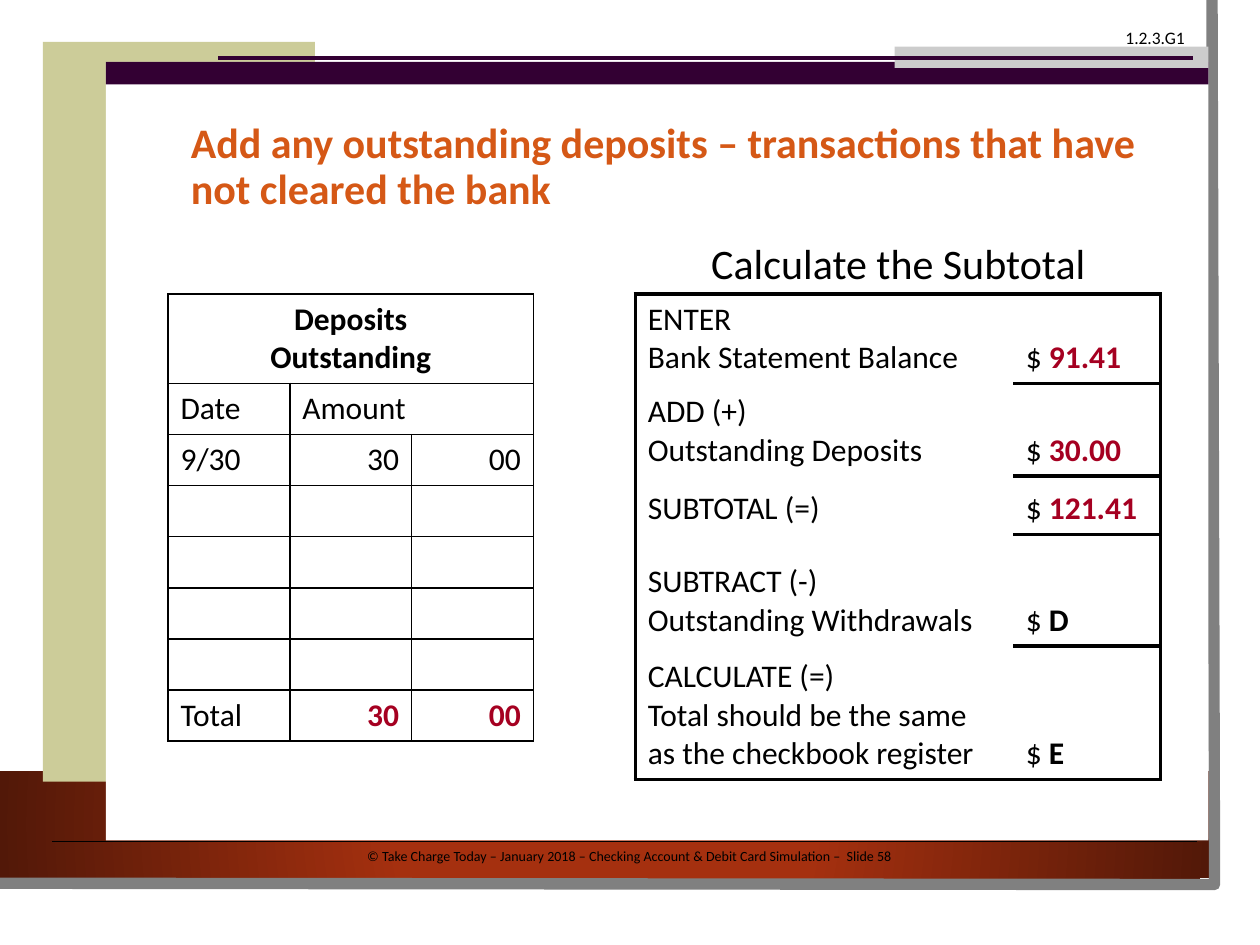
from lxml.etree import SubElement
from pptx import Presentation
from pptx.dml.color import RGBColor as Rgb
from pptx.enum.shapes import MSO_CONNECTOR as Link, MSO_SHAPE as Preset
from pptx.enum.text import MSO_ANCHOR as Anchor, PP_ALIGN as Align
from pptx.oxml import parse_xml
from pptx.oxml.ns import nsdecls, qn
from pptx.util import Inches, Pt

COLORS = {
    "ink": "000000", "paper": "FFFFFF", "edge": "808080", "khaki": "CCCC99",
    "plum": "330033", "silver": "CCCCCC", "orange": "D55816", "crimson": "A50021",
    "rust": "A5300F", "umber": "521808",
}
BODY = {"size": 18, "color": "ink"}
BOLD = {"bold": True}
ANSWER = {"bold": True, "color": "crimson"}


class SlideBuilder:
    """Draws styled elements on a grid of twelve cells to the inch."""

    def __init__(self, deck, font):
        self.slide = deck.slides.add_slide(deck.slide_layouts[6])
        self.shapes = self.slide.shapes
        self.font = font

    def cells(self, *counts):
        return [Inches(count / 12) for count in counts]

    def rgb(self, name):
        return Rgb.from_string(COLORS[name])

    def panel(self, color, *box):
        panel = self.shapes.add_shape(Preset.RECTANGLE, *self.cells(*box))
        panel.shadow.inherit = False
        panel.fill.solid()
        panel.fill.fore_color.rgb = self.rgb(color)
        panel.line.fill.background()
        return panel

    def glow(self, inner, outer, *box):
        band = self.panel(inner, *box)
        stops = "".join(
            f'<a:gs pos="{at}"><a:srgbClr val="{COLORS[name]}"/></a:gs>'
            for at, name in ((34000, inner), (100000, outer)))
        gradient = parse_xml(
            f'<a:gradFill {nsdecls("a")} rotWithShape="1"><a:gsLst>{stops}</a:gsLst>'
            '<a:path path="circle"><a:fillToRect l="50000" t="50000" r="50000" b="50000"/>'
            '</a:path></a:gradFill>')
        props = band._element.spPr
        props.replace(props.find(qn("a:solidFill")), gradient)

    def outline(self, color, width, points):
        start, *rest = [self.cells(*point) for point in points]
        builder = self.shapes.build_freeform(*start)
        builder.add_line_segments(rest, close=False)
        outline = builder.convert_to_shape()
        outline.shadow.inherit = False
        outline.fill.background()
        outline.line.color.rgb = self.rgb(color)
        outline.line.width = Pt(width)

    def rule(self, color, width, left, right, row):
        ends = self.cells(left, row, right, row)
        rule = self.shapes.add_connector(Link.STRAIGHT, *ends)
        rule.line.color.rgb = self.rgb(color)
        rule.line.width = Pt(width)
        SubElement(rule._element.spPr, qn("a:effectLst"))

    def fill_text(self, frame, paragraphs, style, **layout):
        for index, runs in enumerate(paragraphs):
            paragraph = frame.paragraphs[0] if index == 0 else frame.add_paragraph()
            for name, value in layout.items():
                setattr(paragraph, name, value)
            for text, change in runs:
                look = {**style, **change}
                values = {"name": self.font, "size": Pt(look["size"]),
                          "bold": look.get("bold", False)}
                for part, piece in enumerate(text.split("\v")):
                    if part:
                        paragraph.add_line_break()
                    run = paragraph.add_run()
                    run.text = piece
                    for name, value in values.items():
                        setattr(run.font, name, value)
                    run.font.color.rgb = self.rgb(look["color"])

    def text(self, words, style, *box, anchor=Anchor.TOP, **layout):
        frame = self.shapes.add_textbox(*self.cells(*box)).text_frame
        frame.word_wrap = True
        frame.vertical_anchor = anchor
        self.fill_text(frame, [[(words, {})]], style, **layout)

    def table(self, left, top, columns, rows):
        box = self.cells(left, top, sum(columns), sum(rows))
        table = self.shapes.add_table(len(rows), len(columns), *box).table
        table.first_row = table.horz_banding = False
        for column, width in zip(table.columns, self.cells(*columns)):
            column.width = width
        for row, height in zip(table.rows, self.cells(*rows)):
            row.height = height
        for cell in table.iter_cells():
            cell.fill.background()
        return table

    def border(self, cell, sides, width):
        props = cell._tc.get_or_add_tcPr()
        for index, side in enumerate("LRTB"):
            fill = (f'<a:solidFill><a:srgbClr val="{COLORS["ink"]}"/></a:solidFill>'
                    if side in sides else "<a:noFill/>")
            props.insert(index, parse_xml(
                f'<a:ln{side} {nsdecls("a")} w="{Pt(width)}">{fill}</a:ln{side}>'))


def draw_frame(page):
    """Draw the page decoration, footer and lesson code."""
    page.panel("paper", 0, 0, 118, 87.2)
    page.glow("rust", "umber", 0, 73.44, 115.2, 10.2)
    page.outline("edge", 6.5, [(115.44, 0), (115.68, 84.24), (-0.24, 84.12)])
    page.text("© Take Charge Today – January 2018 – Checking Account & Debit Card "
              "Simulation –  Slide 58", {"size": 8, "color": "ink"},
              5, 80.16, 110, 2.88, alignment=Align.CENTER)
    page.panel("khaki", 4.08, 4, 25.92, 70.44)
    page.panel("paper", 10.08, 5.88, 105, 74.16)
    page.panel("plum", 10.08, 5.88, 105, 2.16)
    page.panel("silver", 85.2, 4.44, 29.88, 2.04)
    page.rule("plum", 2, 20.8, 113.64, 5.52)
    page.rule("ink", 0.75, 5, 114, 80.16)
    page.text("1.2.3.G1", {"size": 10, "color": "ink"}, 106, 2, 9, 3.24)


def draw_deposits(page):
    """Draw the table of outstanding deposits."""
    table = page.table(16, 28, [11.6] * 3, [8.52] + [4.87] * 7)
    table.cell(0, 0).merge(table.cell(0, 2))
    table.cell(1, 1).merge(table.cell(1, 2))
    page.fill_text(table.cell(0, 0).text_frame,
                   [[("Deposits", BOLD)], [("Outstanding", BOLD)]],
                   BODY, alignment=Align.CENTER)
    entries = {1: ("Date", "Amount"), 2: ("9/30", "30", "00"), 7: ("Total", "30", "00")}
    for row, words in entries.items():
        for column, word in enumerate(words):
            amount = column > 0 and row > 1
            page.fill_text(table.cell(row, column).text_frame,
                           [[(word, ANSWER if amount and row == 7 else {})]], BODY,
                           alignment=Align.RIGHT if amount else Align.LEFT)
    for cell in table.iter_cells():
        page.border(cell, "LRTB", 1)


def draw_subtotal(page):
    """Draw the reconciliation steps with their amounts."""
    steps = [
        (["ENTER", "Bank Statement Balance"], "91.41", ANSWER, 8.52),
        (["ADD (+)\vOutstanding Deposits"], "30.00", ANSWER, 8.8),
        (["SUBTOTAL (=)"], "121.41", ANSWER, 5.6),
        (["SUBTRACT (-)\vOutstanding Withdrawals"], "D", BOLD, 10.6),
        (["CALCULATE (=)", "Total should be the same as the checkbook register"],
         "E", BOLD, 12.7),
    ]
    table = page.table(60.5, 28, [36, 14], [step[-1] for step in steps])
    for row, (labels, amount, look, _) in enumerate(steps):
        label, value = table.cell(row, 0), table.cell(row, 1)
        label.vertical_anchor = Anchor.BOTTOM if row else Anchor.TOP
        value.vertical_anchor = Anchor.BOTTOM
        page.fill_text(label.text_frame, [[(words, {})] for words in labels], BODY)
        page.fill_text(value.text_frame, [[("$ ", {}), (amount, look)]], BODY)
        top = "T" if row == 0 else ""
        bottom = "B" if row == len(steps) - 1 else ""
        page.border(label, "L" + top + bottom, 2.25)
        page.border(value, "RTB", 2.25)


def main():
    """Build the slide and save it."""
    deck = Presentation()
    deck.slide_width, deck.slide_height = Inches(10), Inches(7.5)
    page = SlideBuilder(deck, "Calibri")
    draw_frame(page)
    page.text("Add any outstanding deposits – transactions that have not cleared the bank",
              {"size": 24, "color": "orange", "bold": True}, 17, 9, 95, 14,
              anchor=Anchor.MIDDLE, line_spacing=0.9)
    page.text("Calculate the Subtotal", {"size": 24, "color": "ink"}, 62.8, 20, 45.5, 8,
              anchor=Anchor.BOTTOM, alignment=Align.CENTER)
    draw_deposits(page)
    draw_subtotal(page)
    deck.save("out.pptx")


if __name__ == "__main__":
    main()
